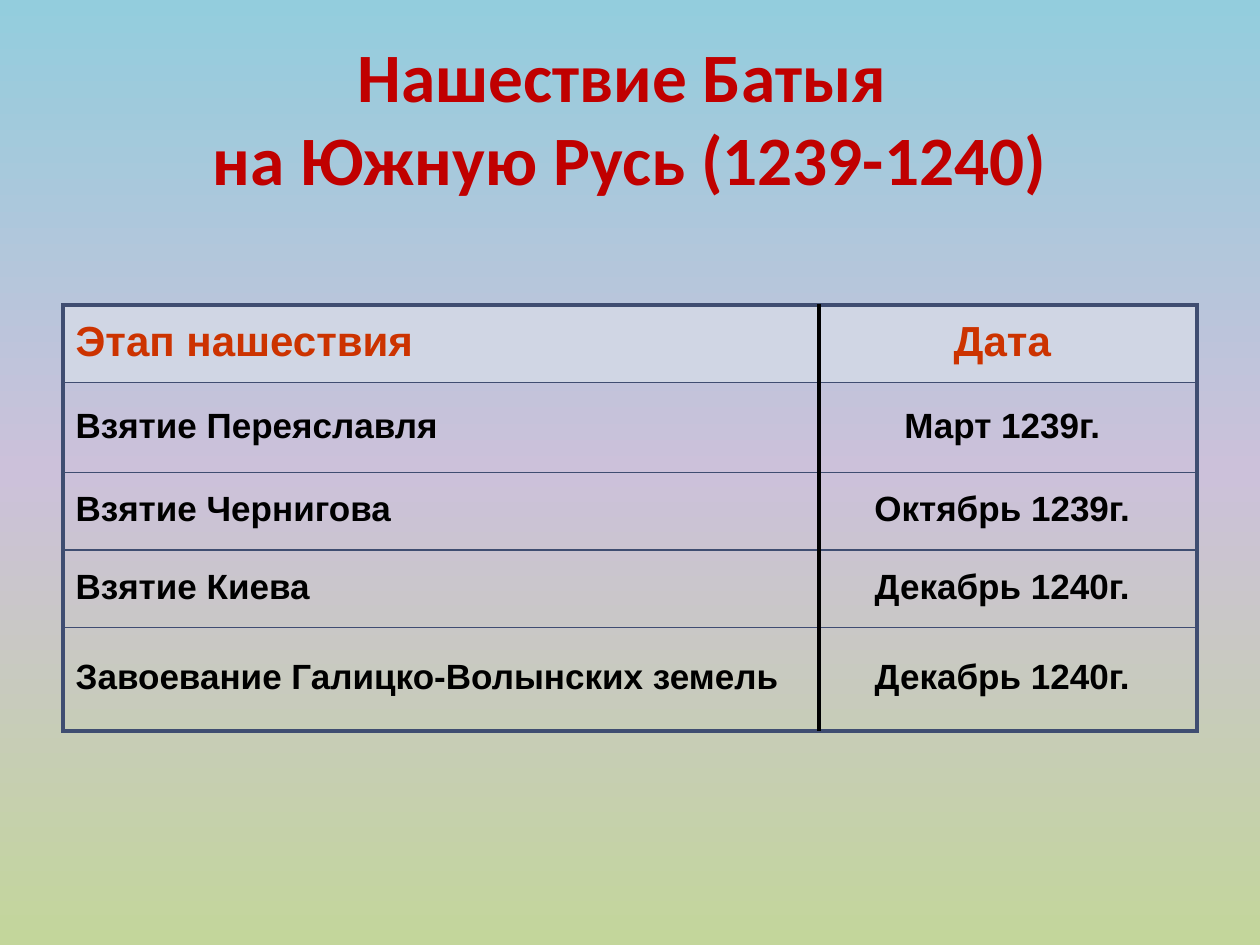
import copy
from dataclasses import dataclass

import pptx
import pptx.dml.color
import pptx.enum.shapes
import pptx.enum.text
import pptx.oxml
import pptx.oxml.ns
import pptx.util
from lxml import etree

Pt = pptx.util.Pt
RGBColor = pptx.dml.color.RGBColor
Align = pptx.enum.text.PP_ALIGN
Anchor = pptx.enum.text.MSO_ANCHOR
qn = pptx.oxml.ns.qn

SKY = RGBColor(0x93, 0xCD, 0xDD)
LILAC = RGBColor(0xCC, 0xC1, 0xDA)
GREEN = RGBColor(0xC3, 0xD6, 0x9B)
RED = RGBColor(0xC0, 0x00, 0x00)
ORANGE = RGBColor(0xCC, 0x33, 0x00)
BLACK = RGBColor(0x00, 0x00, 0x00)
HEADER_FILL = RGBColor(0xD0, 0xD6, 0xE4)
BORDER = RGBColor(0x3F, 0x4D, 0x71)

LEFT, TABLE_TOP, WIDTH = 36, 174.2, 648
COLUMN_WIDTHS = (425.5, 222.5)
OUTER, INNER = 2.25, 1


@dataclass
class Stage:
    name: str
    date: str
    height: float
    size: float = 20
    color: RGBColor = BLACK


STAGES = [
    Stage("Этап нашествия", "Дата", 44.5, 24, ORANGE),
    Stage("Взятие Переяславля", "Март 1239г.", 51.25),
    Stage("Взятие Чернигова", "Октябрь 1239г.", 44.5),
    Stage("Взятие Киева", "Декабрь 1240г.", 44.25),
    Stage("Завоевание Галицко-Волынских земель", "Декабрь 1240г.", 59),
]


def write(tf, text: str, *, font: str, size: float, color: RGBColor,
          align=Align.LEFT, line_spacing: float = 1, before: float = 0) -> None:
    p = tf.paragraphs[0]
    p.alignment = align
    p.line_spacing = line_spacing
    p.space_before = Pt(before)
    for i, line in enumerate(text.split("\n")):
        if i:
            p.add_line_break()
        r = p.add_run()
        r.text = line
        r.font.name, r.font.size, r.font.bold = font, Pt(size), True
        r.font.color.rgb = color


def set_background(s) -> None:
    fill = s.background.fill
    fill.gradient()
    fill.gradient_angle = 270
    stop_list = s.element.find(".//" + qn("a:gsLst"))
    stop_list.append(copy.deepcopy(stop_list[-1]))
    stops = zip(fill.gradient_stops, (0, 0.5, 1), (SKY, LILAC, GREEN))
    for stop, position, color in stops:
        stop.position = position
        stop.color.rgb = color


def set_borders(cell, widths: dict[str, float]) -> None:
    """Give each side (L, R, T, B) its width in points; 0 hides the line."""
    props = cell._tc.get_or_add_tcPr()
    for i, (side, width) in enumerate(widths.items()):
        ln = etree.Element(qn("a:ln" + side), w=str(Pt(width)))
        if width:
            solid = etree.SubElement(ln, qn("a:solidFill"))
            etree.SubElement(solid, qn("a:srgbClr"), val=str(BORDER))
        else:
            etree.SubElement(ln, qn("a:noFill"))
        props.insert(i, ln)


def add_stage_table(s, stages: list[Stage]) -> None:
    height = sum(stage.height for stage in stages)
    table = s.shapes.add_table(len(stages), 2, Pt(LEFT), Pt(TABLE_TOP),
                               Pt(WIDTH), Pt(height)).table
    table.first_row = table.horz_banding = False
    for column, width in zip(table.columns, COLUMN_WIDTHS):
        column.width = Pt(width)
    last = len(stages) - 1
    for i, stage in enumerate(stages):
        table.rows[i].height = Pt(stage.height)
        for j, text in enumerate((stage.name, stage.date)):
            cell = table.cell(i, j)
            cell.vertical_anchor = Anchor.MIDDLE
            if i == 0:
                cell.fill.solid()
                cell.fill.fore_color.rgb = HEADER_FILL
            else:
                cell.fill.background()
            write(cell.text_frame, text, font="Arial", size=stage.size,
                  color=stage.color, align=Align.CENTER if j else Align.LEFT,
                  line_spacing=0.9, before=stage.size * 0.2)
            set_borders(cell, {
                "L": 0 if j else OUTER,
                "R": OUTER if j else 0,
                "T": INNER if i else OUTER,
                "B": OUTER if i == last else INNER,
            })


def add_column_divider(s, x: float, top: float, bottom: float) -> None:
    line = s.shapes.add_connector(pptx.enum.shapes.MSO_CONNECTOR.STRAIGHT,
                                  Pt(x), Pt(top), Pt(x), Pt(bottom))
    line.line.color.rgb = BLACK
    line.line.width = Pt(1.75)
    etree.SubElement(line._element.spPr, qn("a:effectLst"))


def main() -> None:
    prs = pptx.Presentation()
    prs.slide_width, prs.slide_height = Pt(720), Pt(540)
    s = prs.slides.add_slide(prs.slide_layouts[5])
    set_background(s)

    title = s.shapes.title
    title.left, title.top = Pt(LEFT), Pt(21.6)
    title.width, title.height = Pt(WIDTH), Pt(90)
    title.text_frame.vertical_anchor = Anchor.MIDDLE
    write(title.text_frame, "Нашествие Батыя \nна Южную Русь (1239-1240)",
          font="Calibri", size=39.6, color=RED, align=Align.CENTER)

    add_stage_table(s, STAGES)
    add_column_divider(s, 468, 173.5, 417.5)
    prs.save("out.pptx")


if __name__ == "__main__":
    main()
